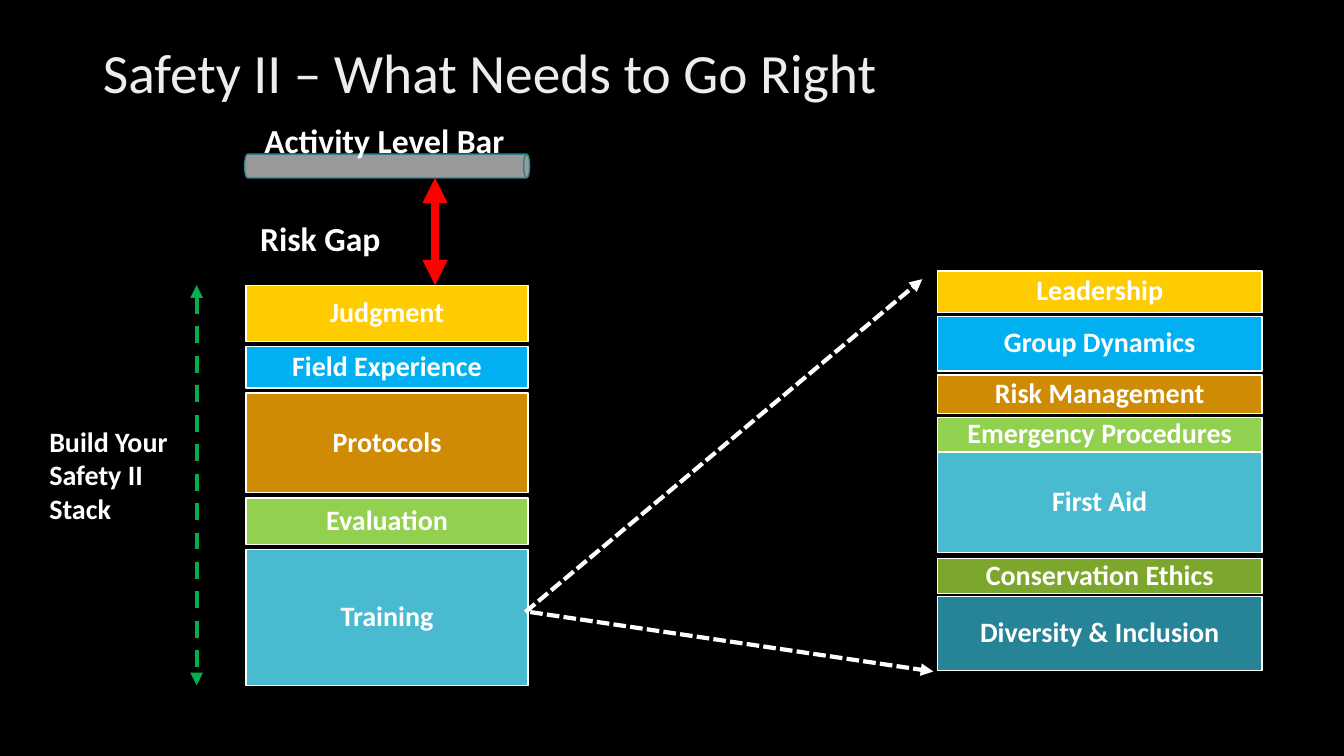
import dataclasses

import pptx
import pptx.dml.color
import pptx.enum.dml
import pptx.enum.shapes
import pptx.enum.text
import pptx.oxml
import pptx.oxml.ns
import pptx.util

SHAPE = pptx.enum.shapes.MSO_SHAPE
DASH = pptx.enum.dml.MSO_LINE
ALIGN = pptx.enum.text.PP_ALIGN
ANCHOR = pptx.enum.text.MSO_ANCHOR


@dataclasses.dataclass(frozen=True)
class Theme:
    """Colours, font and point sizes of the slide."""
    font: str = "Calibri"
    back: str = "000000"
    text: str = "FFFFFF"
    title: str = "EDEDED"
    yellow: str = "FFCC00"
    blue: str = "00B0F0"
    ochre: str = "CF8B03"
    lime: str = "92D050"
    aqua: str = "49BBD1"
    olive: str = "7DA62C"
    teal: str = "268496"
    build: str = "00B050"
    risk: str = "FF0000"
    bar_line: str = "30818C"
    title_size: float = 39.6
    label_size: float = 24
    body_size: float = 20


T = Theme()


@dataclasses.dataclass(frozen=True)
class Box:
    """A rectangle whose parts are given in percent of its size."""
    x: float
    y: float
    w: float
    h: float

    def point(self, px, py):
        """Return the position at the given percentages."""
        return int(self.x + self.w * px / 100), int(self.y + self.h * py / 100)

    def sub(self, px, py, pw, ph):
        """Return the inner box at the given percentages."""
        return Box(*self.point(px, py), int(self.w * pw / 100), int(self.h * ph / 100))

    def frame(self):
        """Return left, top, width and height."""
        return self.x, self.y, self.w, self.h


def rgb(value):
    """Turn a hex string into a colour."""
    return pptx.dml.color.RGBColor.from_string(value)


def write(sp, text, size=T.body_size, color=T.text, bold=True,
          align=ALIGN.LEFT, anchor=ANCHOR.TOP, spacing=None, inset=None):
    """Put one formatted paragraph into a shape."""
    tf = sp.text_frame
    tf.word_wrap = True
    tf.vertical_anchor = anchor
    if inset is not None:
        tf.margin_left = tf.margin_right = tf.margin_top = tf.margin_bottom = inset
    p = tf.paragraphs[0]
    p.alignment = align
    if spacing:
        p.line_spacing = spacing
    r = p.add_run()
    r.text = text
    r.font.name, r.font.size, r.font.bold = T.font, pptx.util.Pt(size), bold
    r.font.color.rgb = rgb(color)


def add_label(s, box, text, **fmt):
    """Add a text box."""
    write(s.shapes.add_textbox(*box.frame()), text, **fmt)


def add_block(shapes, kind, box, fill, line):
    """Add a filled and outlined preset shape."""
    sp = shapes.add_shape(kind, *box.frame())
    sp.shadow.inherit = False
    sp.fill.solid()
    sp.fill.fore_color.rgb = rgb(fill)
    sp.line.color.rgb = rgb(line)
    sp.line.width = pptx.util.Pt(1)
    return sp


def add_arrow(s, start, end, color, width=3, dash=None, both=False):
    """Add a straight arrow with one or two heads."""
    c = s.shapes.add_connector(pptx.enum.shapes.MSO_CONNECTOR.STRAIGHT, *start, *end)
    c.line.color.rgb = rgb(color)
    c.line.width = pptx.util.Pt(width)
    if dash:
        c.line.dash_style = dash
    ln = c.line._get_or_add_ln()
    for tag in ("a:headEnd", "a:tailEnd") if both else ("a:tailEnd",):
        end_mark = pptx.oxml.parse_xml(f"<{tag} {pptx.oxml.ns.nsdecls('a')} type='triangle'/>")
        ln.append(end_mark)
    c._element.spPr.append(
        pptx.oxml.parse_xml(f"<a:effectLst {pptx.oxml.ns.nsdecls('a')}/>"))


def add_title(s, box, text):
    """Format and place the title placeholder."""
    sp = s.shapes.title
    sp.left, sp.top, sp.width, sp.height = box.frame()
    write(sp, text, size=T.title_size, color=T.title, bold=False,
          anchor=ANCHOR.MIDDLE, spacing=0.9)


def add_stack(s, box, layers):
    """Fill a box with layers given as text, colour, height and gap below."""
    shapes = s.shapes.add_group_shape().shapes
    total = sum(height + gap for _, _, height, gap in layers)
    top = 0
    for text, fill, height, gap in layers:
        part = box.sub(0, 100 * top / total, 100, 100 * height / total)
        sp = add_block(shapes, SHAPE.RECTANGLE, part, fill, T.text)
        write(sp, text, align=ALIGN.CENTER, anchor=ANCHOR.MIDDLE,
              spacing=0.9, inset=pptx.util.Inches(0.06))
        top += height + gap


def add_risk_gap(s, box):
    """Draw the activity bar and the gap below it."""
    cx, cy = box.point(50, 30)
    long, thick = int(box.w * 1.01), int(box.h * 0.14)
    upright = Box(cx - thick // 2, cy - long // 2, thick, long)
    bar = add_block(s.shapes, SHAPE.CAN, upright, T.text, T.bar_line)
    bar.rotation = 90
    color = bar._element.spPr.find(".//" + pptx.oxml.ns.qn("a:srgbClr"))
    color.append(pptx.oxml.parse_xml(
        f"<a:alpha {pptx.oxml.ns.nsdecls('a')} val='60000'/>"))
    add_arrow(s, box.point(67, 37), box.point(67, 100), T.risk, width=6, both=True)
    add_label(s, box.sub(3, 0, 101, 30), "Activity Level Bar", size=T.label_size)
    add_label(s, box.sub(1.5, 57.5, 54.5, 30), "Risk Gap", size=T.label_size)


def add_build_scale(s, box):
    """Draw the build label and its two-headed arrow."""
    add_label(s, box.sub(0, 33.5, 91, 28), "Build Your Safety II Stack")
    add_arrow(s, box.point(100, 0), box.point(100, 100), T.build,
              dash=DASH.DASH, both=True)


def add_zoom(s, box):
    """Draw the arrows that expand one layer into the second stack."""
    for start, end in (((-0.7, 85.4), (96.3, 2)), ((0.5, 85.4), (99, 100.3))):
        add_arrow(s, box.point(*start), box.point(*end), T.text, dash=DASH.SQUARE_DOT)


def main():
    """Build and save the slide."""
    prs = pptx.Presentation()
    prs.slide_width, prs.slide_height = pptx.util.Inches(13.33), pptx.util.Inches(7.5)
    s = prs.slides.add_slide(prs.slide_layouts[5])
    s.background.fill.solid()
    s.background.fill.fore_color.rgb = rgb(T.back)
    page = Box(0, 0, prs.slide_width, prs.slide_height)
    add_title(s, page.sub(6.9, 5.33, 86.25, 9.2), "Safety II – What Needs to Go Right")
    add_stack(s, page.sub(18.3, 37.73, 21, 52.93), [
        ("Judgment", T.yellow, 56, 5),
        ("Field Experience", T.blue, 41, 5),
        ("Protocols", T.ochre, 99, 5),
        ("Evaluation", T.lime, 46, 5),
        ("Training", T.aqua, 135, 0)])
    add_stack(s, page.sub(69.75, 35.87, 24.15, 52.8), [
        ("Leadership", T.yellow, 41, 4),
        ("Group Dynamics", T.blue, 54, 4),
        ("Risk Management", T.ochre, 38, 4),
        ("Emergency Procedures", T.lime, 34, 1),
        ("First Aid", T.aqua, 99, 6),
        ("Conservation Ethics", T.olive, 35, 3),
        ("Diversity & Inclusion", T.teal, 73, 0)])
    add_zoom(s, page.sub(39.3, 35.87, 30.45, 52.8))
    add_risk_gap(s, page.sub(18.3, 15.2, 21, 22.53))
    add_build_scale(s, page.sub(2.93, 37.73, 11.7, 52.93))
    prs.save("out.pptx")


if __name__ == "__main__":
    main()
